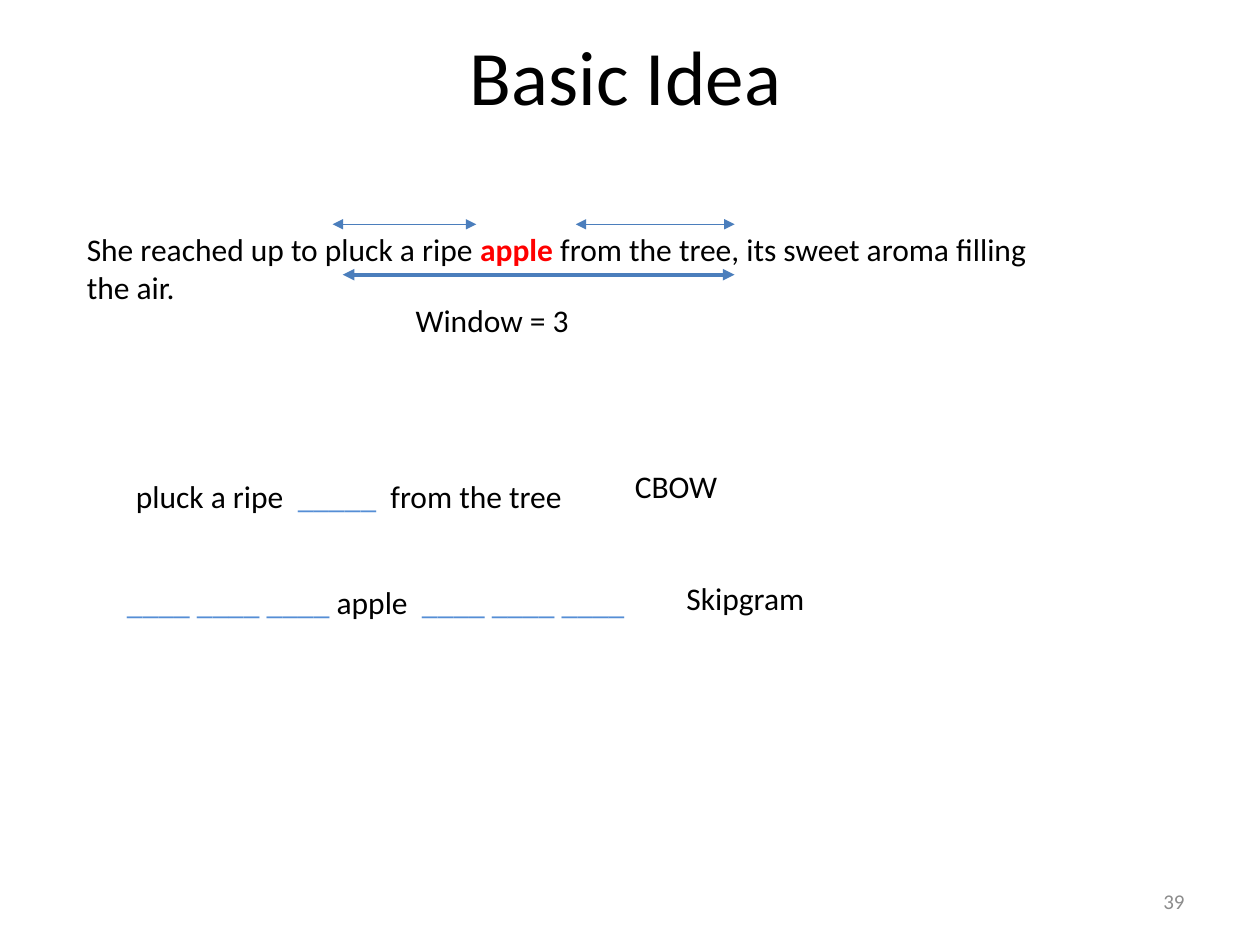
from dataclasses import dataclass

from lxml.etree import SubElement
from pptx import Presentation
from pptx.dml.color import RGBColor
from pptx.enum.shapes import MSO_CONNECTOR
from pptx.enum.text import MSO_ANCHOR, PP_ALIGN
from pptx.oxml.ns import qn
from pptx.util import Inches, Pt


@dataclass(frozen=True)
class Theme:
    font: str = "Calibri"
    ink: str = "000000"
    blank: str = "558ED5"
    accent: str = "FF0000"
    arrow: str = "4B7EBC"
    muted: str = "8C8C8C"
    title_size: int = 44
    body_size: int = 18
    number_size: int = 12


class SlideBuilder:
    """Adds themed text and arrows to one slide."""

    def __init__(self, slide, theme):
        self.slide = slide
        self.theme = theme

    def text(self, box, runs, size=None, align=PP_ALIGN.LEFT, anchor=MSO_ANCHOR.TOP):
        tf = self.slide.shapes.add_textbox(*map(Inches, box)).text_frame
        tf.word_wrap = True
        tf.vertical_anchor = anchor
        p = tf.paragraphs[0]
        p.alignment = align
        for content, color, bold in runs:
            r = p.add_run()
            r.text = content
            r.font.name = self.theme.font
            r.font.size = Pt(size or self.theme.body_size)
            r.font.bold = bold
            r.font.color.rgb = RGBColor.from_string(color)

    def label(self, box, content):
        self.text(box, [(content, self.theme.ink, False)])

    def title(self, box, content):
        self.text(box, [(content, self.theme.ink, False)], self.theme.title_size,
                  PP_ALIGN.CENTER, MSO_ANCHOR.MIDDLE)

    def number(self, box, content):
        self.text(box, [(content, self.theme.muted, False)], self.theme.number_size,
                  PP_ALIGN.RIGHT, MSO_ANCHOR.MIDDLE)

    def span(self, left, right, y, width=0.75):
        line = self.slide.shapes.add_connector(
            MSO_CONNECTOR.STRAIGHT, Inches(left), Inches(y), Inches(right), Inches(y))
        line.line.color.rgb = RGBColor.from_string(self.theme.arrow)
        line.line.width = Pt(width)
        ln = line.line._get_or_add_ln()
        for end in ("a:headEnd", "a:tailEnd"):
            SubElement(ln, qn(end), type="triangle")
        SubElement(line._element.spPr, qn("a:effectLst"))


def main():
    prs = Presentation()
    prs.slide_width, prs.slide_height = Inches(10), Inches(7.5)
    theme = Theme()
    s = SlideBuilder(prs.slides.add_slide(prs.slide_layouts[6]), theme)

    s.title((0.59, 0.12, 8.75, 0.94), "Basic Idea")
    s.text((0.59, 1.78, 7.95, 0.71), [
        ("She reached up to pluck a ripe ", theme.ink, False),
        ("apple", theme.accent, True),
        (" from the tree, its sweet aroma filling the air.", theme.ink, False),
    ])
    s.label((3.2, 2.34, 2.54, 0.4), "Window = 3")
    s.span(2.64, 3.78, 1.78)
    s.span(4.57, 5.83, 1.78)
    s.span(2.72, 5.83, 2.18, width=2.25)

    s.text((0.98, 3.74, 8.43, 0.71), [
        ("pluck a ripe  ", theme.ink, False),
        ("_____  ", theme.blank, False),
        ("from the tree", theme.ink, False),
    ])
    s.label((4.94, 3.66, 1.73, 0.4), "CBOW")
    s.text((0.91, 4.58, 8.43, 0.71), [
        ("____ ____ ____ ", theme.blank, False),
        ("apple  ", theme.ink, False),
        ("____ ____ ____", theme.blank, False),
    ])
    s.label((5.35, 4.55, 1.73, 0.4), "Skipgram")
    s.number((7.17, 6.95, 2.33, 0.4), "39")
    prs.save("out.pptx")


if __name__ == "__main__":
    main()
